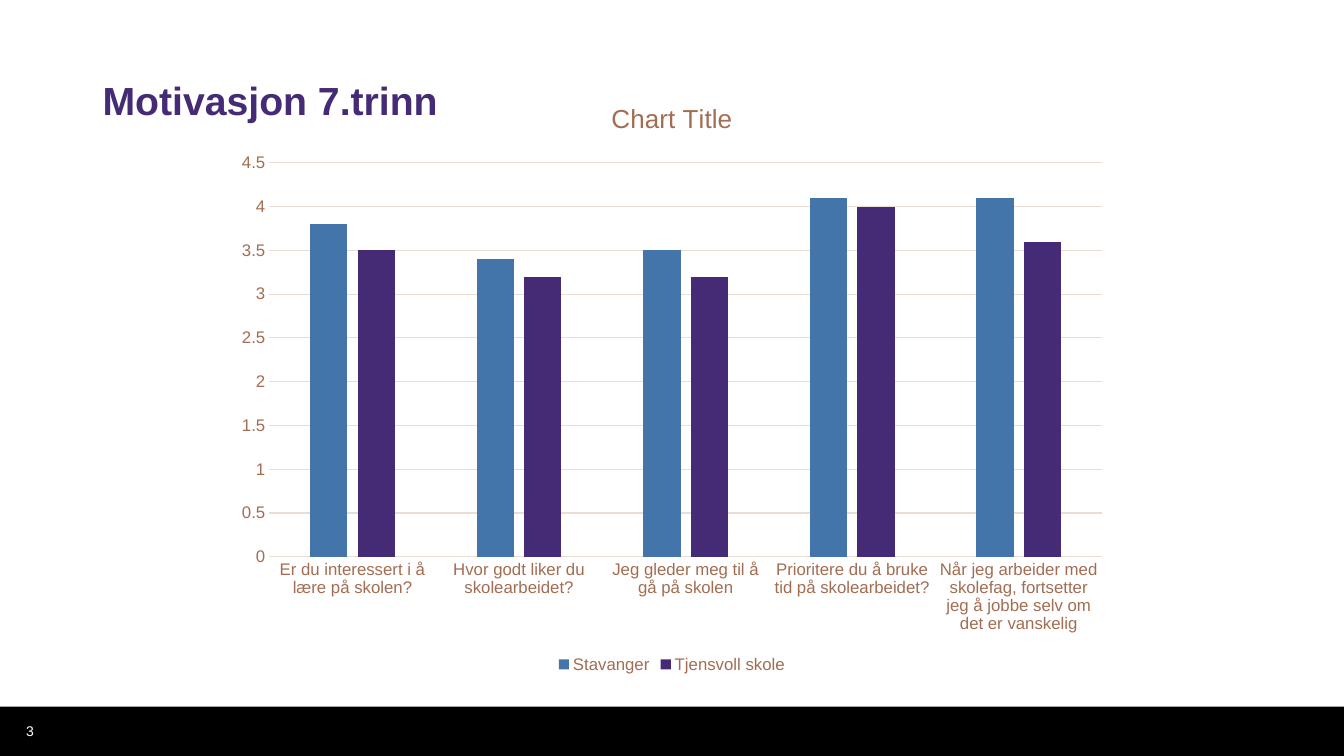
from pptx import Presentation
from pptx.chart.data import CategoryChartData
from pptx.dml.color import RGBColor
from pptx.enum.chart import XL_CHART_TYPE, XL_LEGEND_POSITION, XL_TICK_MARK
from pptx.enum.shapes import MSO_SHAPE
from pptx.enum.text import MSO_ANCHOR
from pptx.util import Inches, Pt

COLUMNS = XL_CHART_TYPE.COLUMN_CLUSTERED
BOTTOM = XL_LEGEND_POSITION.BOTTOM
NO_TICK = XL_TICK_MARK.NONE
RECT = MSO_SHAPE.RECTANGLE
MIDDLE, LOW = MSO_ANCHOR.MIDDLE, MSO_ANCHOR.BOTTOM

BLACK = RGBColor(0x00, 0x00, 0x00)
WHITE = RGBColor(0xFF, 0xFF, 0xFF)
PURPLE = RGBColor(0x45, 0x2B, 0x75)
BLUE = RGBColor(0x43, 0x75, 0xAA)
BROWN = RGBColor(0xA2, 0x6D, 0x52)
SAND = RGBColor(0xEA, 0xDD, 0xD6)
FONT = "Arial"


def style(font, size, color, bold=False):
    font.name = FONT
    font.size = Pt(size)
    font.bold = bold
    font.color.rgb = color


def add_text(s, box, text, size, color, anchor, bold=False):
    tf = s.shapes.add_textbox(*map(Inches, box)).text_frame
    tf.word_wrap = True
    tf.vertical_anchor = anchor
    p = tf.paragraphs[0]
    p.text = text
    style(p.font, size, color, bold)
    return p


prs = Presentation()
prs.slide_width, prs.slide_height = Inches(13.33), Inches(7.5)
W, H = prs.slide_width, prs.slide_height
s = prs.slides.add_slide(prs.slide_layouts[6])

footer_height = Inches(0.49)
footer = s.shapes.add_shape(RECT, 0, H - footer_height, W, footer_height)
footer.shadow.inherit = False
footer.fill.solid()
footer.fill.fore_color.rgb = BLACK
footer.line.fill.background()

title = add_text(s, (0.92, 0.54, 11.5, 0.74), "Motivasjon 7.trinn", 28, PURPLE, LOW, True)
title.line_spacing = 0.9
add_text(s, (0.16, 7.05, 0.52, 0.4), "3", 10, WHITE, MIDDLE)

data = CategoryChartData()
data.categories = [
    "Er du interessert i å lære på skolen?",
    "Hvor godt liker du skolearbeidet?",
    "Jeg gleder meg til å gå på skolen",
    "Prioritere du å bruke tid på skolearbeidet?",
    "Når jeg arbeider med skolefag, fortsetter jeg å jobbe selv om det er vanskelig",
]
data.add_series("Stavanger", (3.8, 3.4, 3.5, 4.1, 4.1))
data.add_series("Tjensvoll skole", (3.5, 3.2, 3.2, 4, 3.6))

chart_width = W * 2 // 3
chart = s.shapes.add_chart(
    COLUMNS, (W - chart_width) // 2, Inches(0.79), chart_width, Inches(5.93), data
).chart
style(chart.font, 12, BROWN)

chart.has_title = True
p = chart.chart_title.text_frame.paragraphs[0]
p.text = "Chart Title"
style(p.font, 18.6, BROWN)
chart.chart_title.include_in_layout = False

chart.has_legend = True
chart.legend.position = BOTTOM
chart.legend.include_in_layout = False
style(chart.legend.font, 12, BROWN)

for axis in (chart.category_axis, chart.value_axis):
    axis.major_tick_mark = axis.minor_tick_mark = NO_TICK
    style(axis.tick_labels.font, 12, BROWN)

grid = chart.value_axis.major_gridlines.format.line
for line in (chart.category_axis.format.line, grid):
    line.color.rgb = SAND
    line.width = Pt(0.75)
chart.value_axis.format.line.fill.background()
chart.value_axis.minimum_scale = 0
chart.value_axis.maximum_scale = 4.5
chart.value_axis.major_unit = 0.5

plot = chart.plots[0]
plot.vary_by_categories = False
plot.gap_width = 219
plot.overlap = -27
for series, color in zip(plot.series, (BLUE, PURPLE)):
    series.format.fill.solid()
    series.format.fill.fore_color.rgb = color

prs.save("out.pptx")
